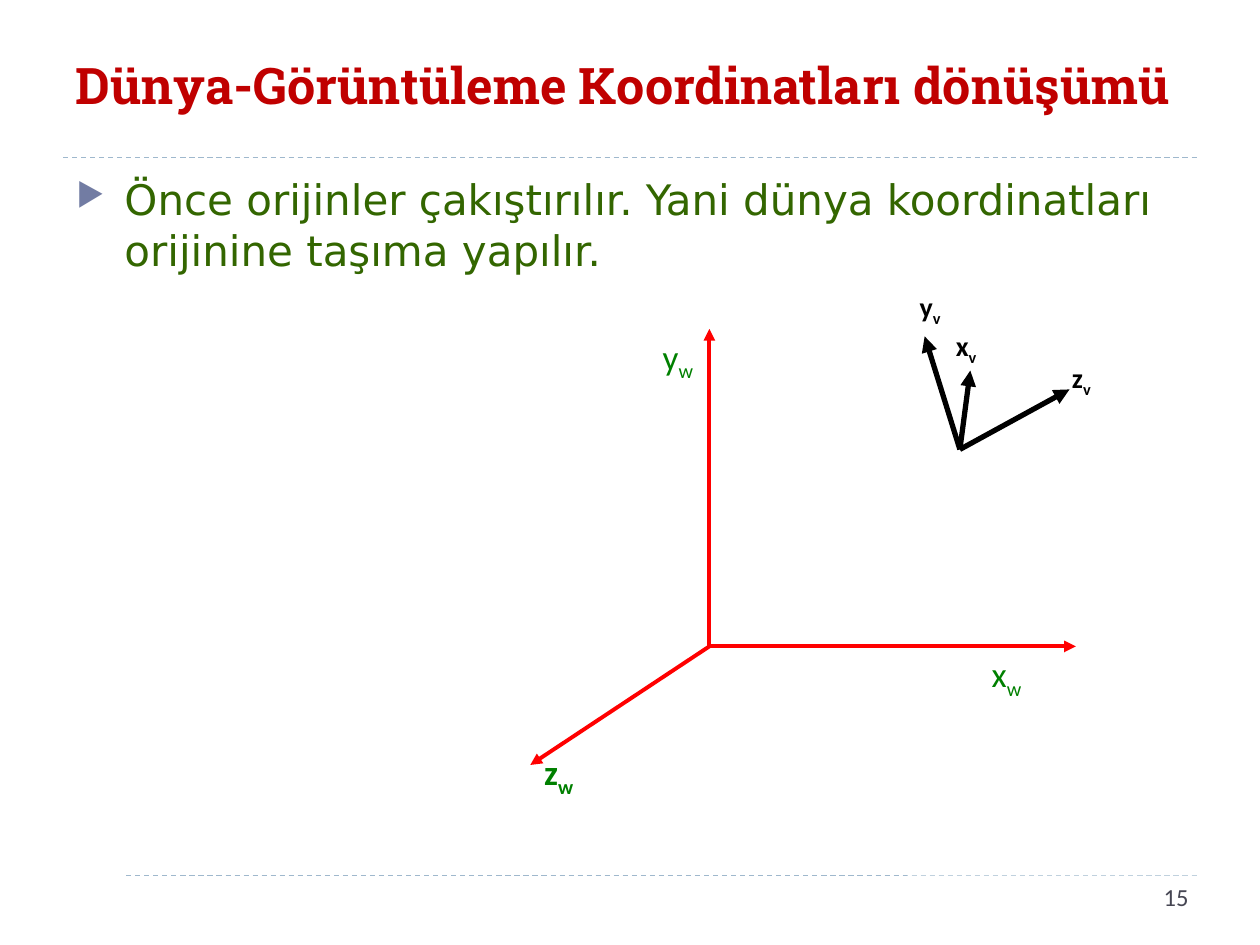
from dataclasses import dataclass

from lxml import etree
from pptx import Presentation
from pptx import util as u
from pptx.dml.color import RGBColor
from pptx.enum import dml, shapes, text
from pptx.oxml.ns import qn

Point = tuple[float, float]
Box = tuple[float, float, float, float]

RED, GREEN, BLACK, WHITE = "FF0000", "008000", "000000", "FFFFFF"


@dataclass(frozen=True)
class Axis:
    """One coordinate axis with its label; lengths in centimetres."""
    name: str
    tip: Point
    label_box: Box
    bold: bool = True


@dataclass(frozen=True)
class AxisSystem:
    subscript: str
    origin: Point
    line_color: str
    line_width: float
    label_color: str
    label_size: float
    axes: tuple[Axis, ...]


WORLD = AxisSystem("w", (14.3, 13.03), RED, 2.25, GREEN, 20, (
    Axis("x", (21.69, 13.03), (19.74, 13.03, 1.19, 1.96), bold=False),
    Axis("y", (14.3, 6.63), (13.11, 6.63, 1.4, 1.09), bold=False),
    Axis("z", (10.69, 15.42), (10.72, 15.01, 1.4, 1.09)),
))
VIEW = AxisSystem("v", (19.35, 9.06), BLACK, 3, BLACK, 16, (
    Axis("x", (19.56, 7.47), (19.02, 6.5, 1.57, 0.94)),
    Axis("y", (18.64, 6.78), (18.29, 5.72, 1.4, 0.94)),
    Axis("z", (21.56, 7.85), (21.36, 7.14, 1.6, 0.94)),
))


def rgb(color: str) -> RGBColor:
    return RGBColor.from_string(color)


def add_line(slide, start: Point, end: Point, color: str, width: float,
             dashed: bool = False, arrow: bool = False):
    line = slide.shapes.add_connector(
        shapes.MSO_CONNECTOR.STRAIGHT, *map(u.Cm, start + end))
    line.line.color.rgb = rgb(color)
    line.line.width = u.Pt(width)
    if dashed:
        line.line.dash_style = dml.MSO_LINE.DASH
    properties = line._element.spPr
    if arrow:
        etree.SubElement(properties.find(qn("a:ln")), qn("a:tailEnd"), type="triangle")
    etree.SubElement(properties, qn("a:effectLst"))
    return line


def add_rectangle(slide, box: Box, color: str):
    shape = slide.shapes.add_shape(shapes.MSO_SHAPE.RECTANGLE, *map(u.Cm, box))
    shape.shadow.inherit = False
    shape.fill.solid()
    shape.fill.fore_color.rgb = rgb(color)
    shape.line.fill.background()
    return shape


def write_text(shape, content: str, *, size: float, color: str, font: str = "Calibri",
               bold: bool = False, subscript: str = "", align=text.PP_ALIGN.LEFT,
               anchor=text.MSO_ANCHOR.TOP, space_before: float = 0):
    frame = shape.text_frame
    frame.word_wrap = True
    frame.vertical_anchor = anchor
    paragraph = frame.paragraphs[0]
    paragraph.alignment = align
    paragraph.space_before = u.Pt(space_before)
    for part in filter(None, (content, subscript)):
        run = paragraph.add_run()
        run.text = part
        run.font.name = font
        run.font.size = u.Pt(size)
        run.font.bold = bold
        run.font.color.rgb = rgb(color)
    if subscript:
        run.font._element.set("baseline", "-25000")
    return paragraph


def add_text(slide, box: Box, content: str, **text_format):
    shape = slide.shapes.add_textbox(*map(u.Cm, box))
    return write_text(shape, content, **text_format)


def add_bullet(paragraph, symbol: str, color: str, percent: int) -> None:
    properties = paragraph._p.get_or_add_pPr()
    properties.set("marL", str(u.Cm(0.99)))
    properties.set("indent", str(-u.Cm(0.97)))
    bullet_color = etree.SubElement(properties, qn("a:buClr"))
    etree.SubElement(bullet_color, qn("a:srgbClr"), val=color)
    etree.SubElement(properties, qn("a:buSzPct"), val=str(percent * 1000))
    etree.SubElement(properties, qn("a:buChar"), char=symbol)


def draw_axes(slide, system: AxisSystem) -> None:
    for axis in system.axes:
        add_line(slide, system.origin, axis.tip, system.line_color,
                 system.line_width, arrow=True)
        add_text(slide, axis.label_box, axis.name, subscript=system.subscript,
                 size=system.label_size, color=system.label_color, bold=axis.bold)


def main() -> None:
    presentation = Presentation()
    presentation.slide_width, presentation.slide_height = u.Cm(25.4), u.Cm(19.05)
    slide = presentation.slides.add_slide(presentation.slide_layouts[6])

    for height in (17.65, 3.17):
        add_line(slide, (1.27, height), (24.13, height), "9FB8CD", 0.75, dashed=True)
    add_rectangle(slide, (0.89, 17.32, 1.6, 1.6), WHITE)

    add_text(slide, (1.27, 0.33, 22.86, 2.74), "Dünya-Görüntüleme Koordinatları dönüşümü",
             font="Roboto Slab", size=28.8, color="C00000", bold=True,
             anchor=text.MSO_ANCHOR.MIDDLE)
    page_number = add_rectangle(slide, (18.29, 17.65, 5.92, 1.02), WHITE)
    write_text(page_number, "15", size=14, color="464653", align=text.PP_ALIGN.RIGHT)

    body = add_text(
        slide, (1.27, 3.38, 22.86, 13.72),
        "Önce orijinler çakıştırılır. Yani dünya koordinatları orijinine taşıma yapılır.",
        font="DejaVu Sans", size=24, color="336600", space_before=6)
    add_bullet(body, "▶", "727CA3", 76)

    for system in (WORLD, VIEW):
        draw_axes(slide, system)

    presentation.save("out.pptx")


if __name__ == "__main__":
    main()
